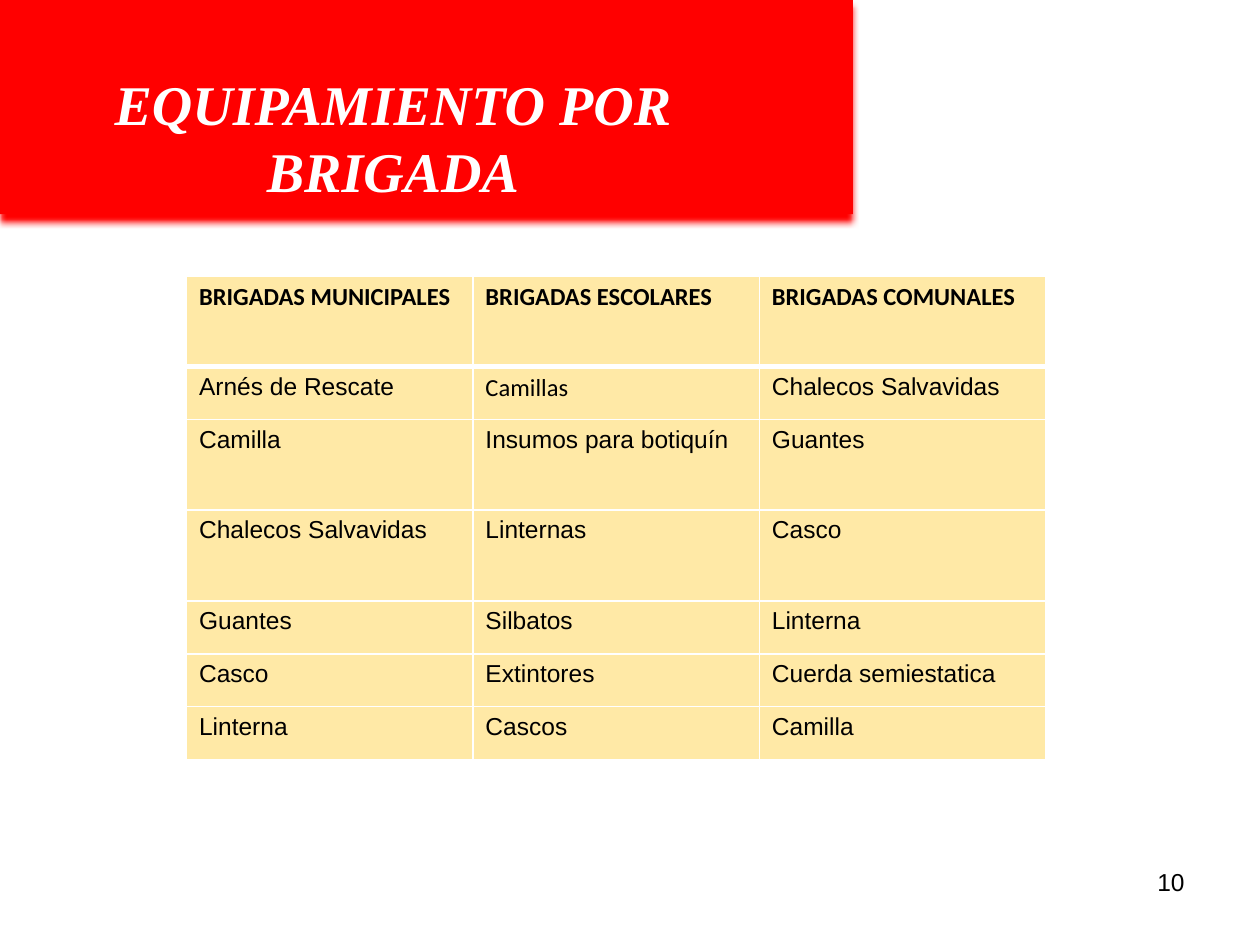
from pptx import Presentation, util as u
from pptx.dml.color import RGBColor
from pptx.enum import shapes, text
from pptx.oxml import parse_xml
from pptx.oxml.ns import nsdecls, qn

HUES = {"red": "FF0000", "gold": "FFC000", "white": "FFFFFF", "black": "000000"}
ROWS = [
    ("BRIGADAS MUNICIPALES", "BRIGADAS ESCOLARES", "BRIGADAS COMUNALES"),
    ("Arnés de Rescate", "Camillas", "Chalecos Salvavidas"),
    ("Camilla", "Insumos para botiquín", "Guantes"),
    ("Chalecos Salvavidas", "Linternas", "Casco"),
    ("Guantes", "Silbatos", "Linterna"),
    ("Casco", "Extintores", "Cuerda semiestatica"),
    ("Linterna", "Cascos", "Camilla"),
]
TALL, LOW = 0.72, 0.42
HEIGHTS = [TALL, LOW, TALL, TALL, LOW, LOW, LOW]
CALIBRI = {(0, 0), (0, 1), (0, 2), (1, 1)}


def hue(name):
    return RGBColor.from_string(HUES[name])


def write(frame, words, size, face, tint, bold=False, slant=False, align=None):
    para = frame.paragraphs[0]
    para.alignment = align
    run = para.add_run()
    run.text = words
    font = run.font
    font.size, font.name = u.Pt(size), face
    font.bold, font.italic = bold, slant
    font.color.rgb = hue(tint)


def label(slide, box, anchor, *args, **style):
    frame = slide.shapes.add_textbox(*map(u.Inches, box)).text_frame
    frame.word_wrap = True
    frame.vertical_anchor = anchor
    write(frame, *args, **style)


def banner(slide, box):
    left, top, width, height = box
    block = slide.shapes.add_shape(
        shapes.MSO_SHAPE.ROUNDED_RECTANGLE, *map(u.Inches, box))
    block.adjustments[0] = 0
    block.fill.solid()
    block.fill.fore_color.rgb = hue("red")
    block.line.fill.background()
    block.shadow.inherit = False
    glow = block._element.spPr.find(qn("a:effectLst"))
    glow.append(parse_xml(
        f'<a:outerShdw {nsdecls("a")} blurRad="{u.Pt(4)}" dist="{u.Pt(4)}" '
        f'dir="5400000" rotWithShape="0"><a:srgbClr val="{HUES["red"]}"/>'
        '</a:outerShdw>'))
    label(slide, (left - 0.04, top + 0.47, width - 0.45, height - 0.47),
          text.MSO_ANCHOR.MIDDLE, "EQUIPAMIENTO POR BRIGADA", 32,
          "Times New Roman", "white", bold=True, slant=True,
          align=text.PP_ALIGN.CENTER)


def dress(cell, row):
    """Give a cell its pale fill and white rules, thick under the header."""
    cell.fill.solid()
    cell.fill.fore_color.rgb = hue("gold")
    props = cell._tc.get_or_add_tcPr()
    tint = props.find(qn("a:solidFill"))[0]
    tint.append(parse_xml(f'<a:alpha {nsdecls("a")} val="35000"/>'))
    widths = {"L": 1, "R": 1, "T": 3 if row == 1 else 1, "B": 3 if row == 0 else 1}
    for spot, (side, width) in enumerate(widths.items()):
        props.insert(spot, parse_xml(
            f'<a:ln{side} {nsdecls("a")} w="{u.Pt(width)}"><a:solidFill>'
            f'<a:srgbClr val="{HUES["white"]}"/></a:solidFill></a:ln{side}>'))


def gear(slide, box):
    """Place the table of equipment for each brigade."""
    grid = slide.shapes.add_table(
        len(ROWS), len(ROWS[0]), *map(u.Inches, box)).table
    grid.horz_banding = False
    for col in grid.columns:
        col.width = u.Inches(box[2] / len(ROWS[0]))
    for r, (words, high) in enumerate(zip(ROWS, HEIGHTS)):
        grid.rows[r].height = u.Inches(high)
        for c, word in enumerate(words):
            cell = grid.cell(r, c)
            face = "Calibri" if (r, c) in CALIBRI else "Arial"
            write(cell.text_frame, word, 14, face, "black", bold=r == 0)
            dress(cell, r)


def main():
    deck = Presentation()
    deck.slide_width, deck.slide_height = u.Inches(10), u.Inches(7.5)
    slide = deck.slides.add_slide(deck.slide_layouts[6])
    banner(slide, (0, 0, 6.77, 1.7))
    gear(slide, (1.48, 2.19, 6.82, sum(HEIGHTS)))
    label(slide, (7.17, 6.83, 2.33, 0.52), text.MSO_ANCHOR.TOP,
          "10", 14, "Arial", "black", align=text.PP_ALIGN.RIGHT)
    deck.save("out.pptx")


if __name__ == "__main__":
    main()
